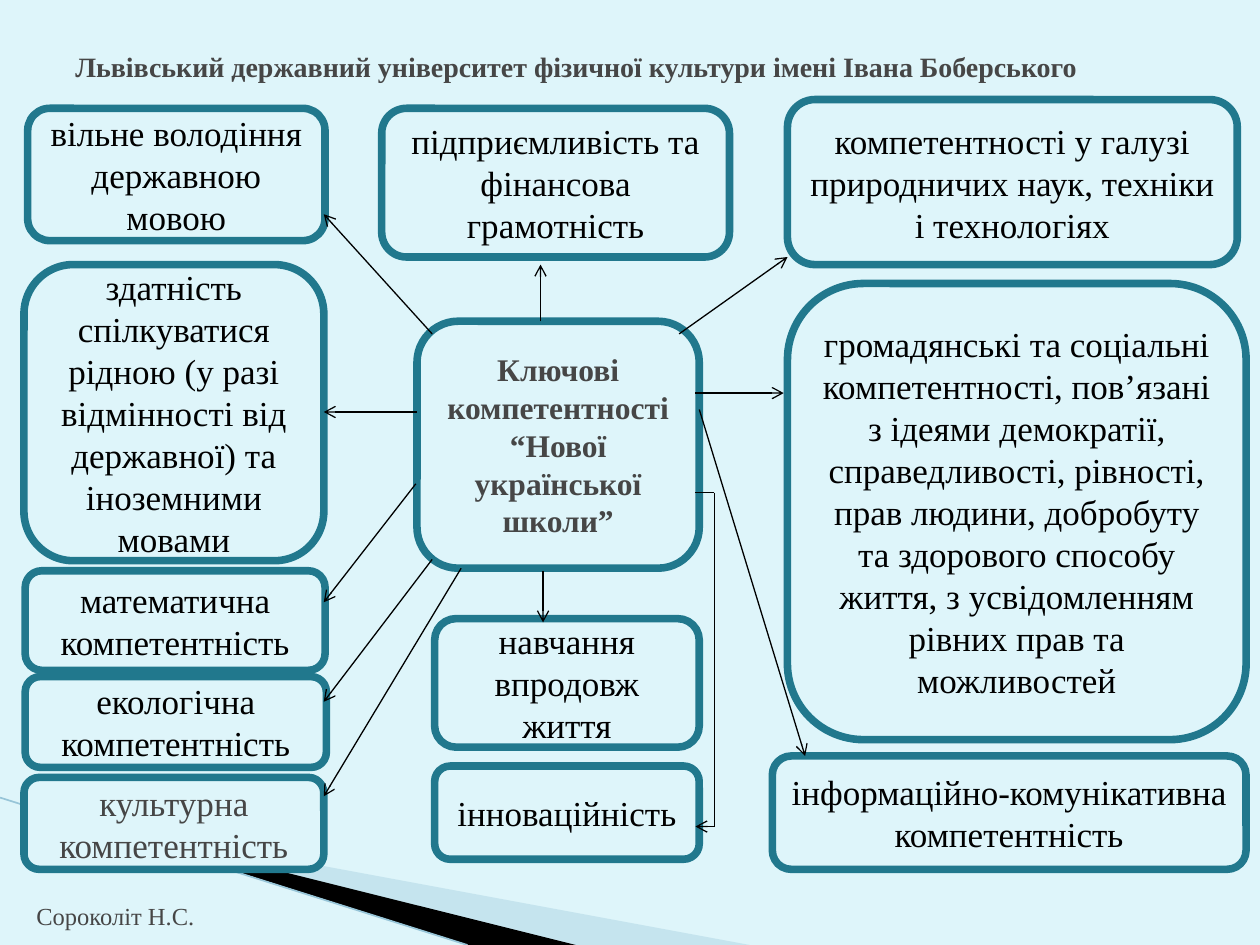
from lxml.etree import SubElement
from pptx import Presentation
from pptx.dml.color import RGBColor
from pptx.enum.shapes import MSO_CONNECTOR as Connector, MSO_SHAPE as Shape
from pptx.enum.text import MSO_ANCHOR as Anchor, MSO_AUTO_SIZE as AutoSize, PP_ALIGN as Align
from pptx.oxml.ns import qn
from pptx.util import Inches, Pt

COLORS = {
    "background": "DEF5FA",
    "border": "21788D",
    "text": "000000",
    "muted": "464646",
    "band": "A0CBDC",
    "edge": "97C5D8",
    "black": "000000",
}

COMPETENCES = [
    (0.19, 2.1, 2.38, 2.35, "здатність спілкуватися рідною (у разі відмінності від державної) та іноземними мовами"),
    (3.45, 4.91, 2.1, 1.02, "навчання\nвпродовж життя"),
    (6.25, 0.79, 3.57, 1.31, "компетентності у галузі природничих наук, техніки і технологіях"),
    (6.13, 6, 3.76, 0.9, "інформаційно-комунікативна компетентність"),
    (0.2, 5.37, 2.39, 0.72, "екологічна компетентність"),
    (0.2, 4.53, 2.38, 0.79, "математична компетентність"),
    (0.22, 0.86, 2.36, 1.05, "вільне володіння державною мовою"),
    (3.45, 6.08, 2.1, 0.74, "інноваційність"),
    (6.25, 2.25, 3.64, 3.62, "громадянські та соціальні компетентності, пов’язані з ідеями демократії, "
     "справедливості, рівності, прав людини, добробуту та здорового способу життя, "
     "з усвідомленням рівних прав та можливостей"),
    (3.03, 0.86, 2.76, 1.18, "підприємливість та фінансова грамотність"),
]

ARROWS = [
    ((4.29, 2.55), (4.29, 2.1)),
    ((3.43, 2.65), (2.57, 1.7)),
    ((3.31, 3.27), (2.57, 3.27)),
    ((5.52, 3.12), (6.22, 3.12)),
    ((3.3, 3.84), (2.57, 4.78)),
    ((3.43, 4.44), (2.57, 5.57)),
    ((3.66, 4.51), (2.57, 6.32)),
    ((4.31, 4.53), (4.31, 4.94)),
    ((5.67, 6.56), (5.52, 6.56)),
    ((5.55, 3.25), (6.39, 6)),
    ((5.39, 2.65), (6.25, 2.04)),
]


def rgb(name):
    return RGBColor.from_string(COLORS[name])


def write_text(frame, text, size=20, color="text", bold=False, align=Align.CENTER,
               anchor=Anchor.MIDDLE, wrap=True):
    frame.word_wrap = wrap
    frame.vertical_anchor = anchor
    for index, line in enumerate(text.split("\n")):
        paragraph = frame.add_paragraph() if index else frame.paragraphs[0]
        paragraph.alignment = align
        run = paragraph.add_run()
        run.text = line
        run.font.name = "Times New Roman"
        run.font.size = Pt(size)
        run.font.bold = bold
        run.font.color.rgb = rgb(color)


class SlideBuilder:
    """Draws styled elements on the current slide."""

    def __init__(self, slide):
        self.slide = slide
        self.shapes = slide.shapes
        self.border_width = Pt(4.33)

    def background(self, color):
        fill = self.slide.background.fill
        fill.solid()
        fill.fore_color.rgb = rgb(color)

    def polygon(self, points, color, opacity=100):
        corners = [(Inches(x), Inches(y)) for x, y in points]
        builder = self.shapes.build_freeform(*corners[0], scale=1.0)
        builder.add_line_segments(corners[1:], close=True)
        shape = builder.convert_to_shape()
        shape.shadow.inherit = False
        shape.fill.solid()
        shape.fill.fore_color.rgb = rgb(color)
        shape.line.fill.background()
        if opacity < 100:
            fill_color = shape.element.spPr.find(qn("a:solidFill"))[0]
            SubElement(fill_color, qn("a:alpha"), val=str(opacity * 1000))

    def label(self, left, top, width, height, text, **text_format):
        box = self.shapes.add_textbox(Inches(left), Inches(top), Inches(width), Inches(height))
        write_text(box.text_frame, text, align=Align.LEFT, **text_format)
        return box

    def card(self, left, top, width, height, text, **text_format):
        shape = self.shapes.add_shape(
            Shape.ROUNDED_RECTANGLE, Inches(left), Inches(top), Inches(width), Inches(height))
        shape.shadow.inherit = False
        shape.fill.solid()
        shape.fill.fore_color.rgb = rgb("background")
        shape.line.color.rgb = rgb("border")
        shape.line.width = self.border_width
        write_text(shape.text_frame, text, **text_format)

    def line(self, start, end, color="black", width=0.75, arrow=False):
        connector = self.shapes.add_connector(
            Connector.STRAIGHT, *(Inches(value) for value in (*start, *end)))
        connector.line.color.rgb = rgb(color)
        connector.line.width = Pt(width)
        properties = connector.element.spPr
        if arrow:
            SubElement(properties.find(qn("a:ln")), qn("a:tailEnd"), type="arrow")
        SubElement(properties, qn("a:effectLst"))


def main():
    presentation = Presentation()
    presentation.slide_width = Inches(10)
    presentation.slide_height = Inches(7.5)
    builder = SlideBuilder(presentation.slides.add_slide(presentation.slide_layouts[6]))

    builder.background("background")
    builder.polygon([(0.55, 6.5), (5.95, 7.5), (4.56, 7.5)], "band", opacity=40)
    builder.polygon([(0.53, 6.49), (4.57, 7.5), (3.72, 7.5)], "black")
    builder.line((0, 6.33), (3.71, 7.5), color="edge", width=0.95)

    builder.label(0.5, 0.3, 9, 0.46,
                  "Львівський державний університет фізичної культури імені Івана Боберського",
                  size=16, color="muted", bold=True)
    author = builder.label(0.19, 7.1, 1.47, 0.34, "Сороколіт Н.С.",
                           size=14, color="muted", anchor=Anchor.TOP, wrap=False)
    author.text_frame.auto_size = AutoSize.SHAPE_TO_FIT_TEXT

    for competence in COMPETENCES:
        builder.card(*competence)
    builder.card(0.19, 6.17, 2.38, 0.73, "культурна компетентність", color="muted")
    builder.card(3.31, 2.55, 2.24, 1.96, "Ключові компетентності “Нової української школи”",
                 size=18, color="muted", bold=True)

    for start, end in ARROWS:
        builder.line(start, end, arrow=True)
    builder.line((5.52, 3.91), (5.67, 3.91))
    builder.line((5.67, 3.91), (5.67, 6.56))

    presentation.save("out.pptx")


if __name__ == "__main__":
    main()
